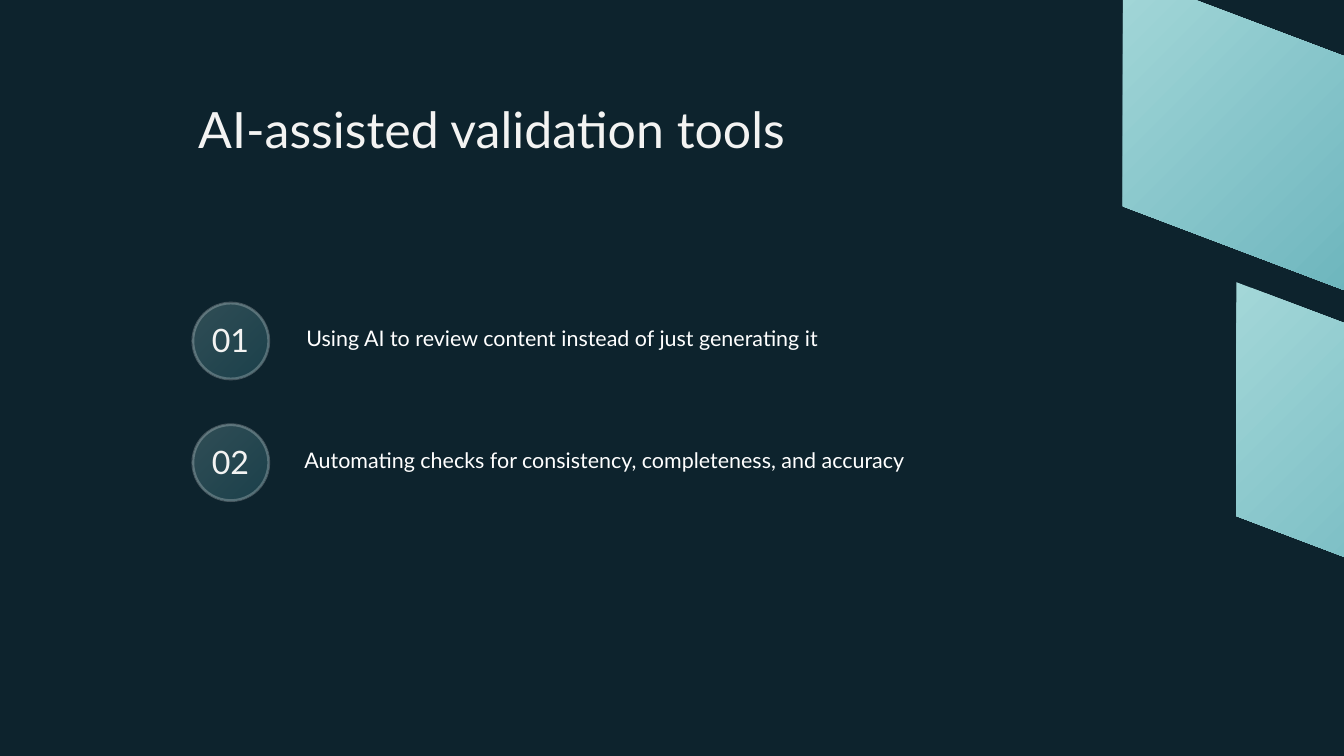
from lxml import etree
from pptx import Presentation
from pptx.dml.color import RGBColor
from pptx.enum.shapes import MSO_SHAPE
from pptx.enum.text import PP_ALIGN
from pptx.oxml.ns import qn
from pptx.util import Inches, Pt

NIGHT = RGBColor(0x0D, 0x23, 0x2D)
AQUA = RGBColor(0xA3, 0xD7, 0xD8)
TEAL = RGBColor(0x48, 0x9E, 0xAB)
PALE = RGBColor(0xF3, 0xF3, 0xF2)
WHITE = RGBColor(0xFF, 0xFF, 0xFF)

FONT = "Lato"
DISC = 1.13  # badge diameter
OPACITY = 24  # percent, for badge fill and outline


def set_alpha(part, percent):
    """Make every RGB colour below an XML element partly transparent."""
    for color in part.iter(qn("a:srgbClr")):
        etree.SubElement(color, qn("a:alpha")).set("val", str(percent * 1000))


def fill_gradient(shape):
    """Run from aqua at top left to teal at bottom right."""
    shape.shadow.inherit = False
    shape.fill.gradient()
    shape.fill.gradient_angle = 315
    for stop, color in zip(shape.fill.gradient_stops, (AQUA, TEAL)):
        stop.color.rgb = color


def add_text(slide, box, text, size, leading, color, align=PP_ALIGN.LEFT):
    frame = slide.shapes.add_textbox(*map(Inches, box)).text_frame
    frame.word_wrap = True
    frame.margin_left = frame.margin_right = 0
    frame.margin_top = frame.margin_bottom = 0
    para = frame.paragraphs[0]
    para.alignment = align
    para.line_spacing = Pt(leading)
    run = para.add_run()
    run.text = text
    run.font.name = FONT
    run.font.size = Pt(size)
    run.font.color.rgb = color


def add_panel(slide, left, top, width=7.4, height=6.28, side=3.48):
    """Slanted panel with upright sides, running off the right edge."""
    corners = [(width, height - side), (width, height), (0, side)]
    outline = slide.shapes.build_freeform(Inches(left), Inches(top))
    outline.add_line_segments(
        [(Inches(left + x), Inches(top + y)) for x, y in corners], close=True)
    panel = outline.convert_to_shape()
    fill_gradient(panel)
    panel.line.fill.background()


def add_item(slide, left, top, number, text, indent, width):
    """Numbered badge with its statement to the right."""
    disc = slide.shapes.add_shape(
        MSO_SHAPE.OVAL, *map(Inches, (left, top, DISC, DISC)))
    fill_gradient(disc)
    disc.line.color.rgb = WHITE
    disc.line.width = Pt(3)
    set_alpha(disc.element.spPr, OPACITY)
    add_text(slide, (left + 0.06, top + 0.28, 1, 0.57),
             f"{number:02}", 34.5, 40, PALE, PP_ALIGN.CENTER)
    add_text(slide, (left + indent, top + 0.27, width, 0.4),
             text, 23, 32.2, WHITE)


def main():
    deck = Presentation()
    deck.slide_width, deck.slide_height = Inches(20), Inches(11.25)
    slide = deck.slides.add_slide(deck.slide_layouts[6])
    slide.background.fill.solid()
    slide.background.fill.fore_color.rgb = NIGHT

    # Title
    add_text(slide, (2.95, 1.5, 10.31, 0.87),
             "AI-assisted validation tools", 53.6, 62.1, PALE)

    # Slanted panels on the right
    for left, top in ((18.4, 4.2), (16.71, -0.41)):
        add_panel(slide, left, top)

    # Numbered list
    items = [
        ("Using AI to review content instead of just generating it",
         1.69, 9.62),
        ("Automating checks for consistency, completeness, and accuracy",
         1.66, 11.17),
    ]
    for index, (text, indent, width) in enumerate(items):
        add_item(slide, 2.87, 4.51 + 1.81 * index, index + 1,
                 text, indent, width)

    deck.save("out.pptx")


if __name__ == "__main__":
    main()
